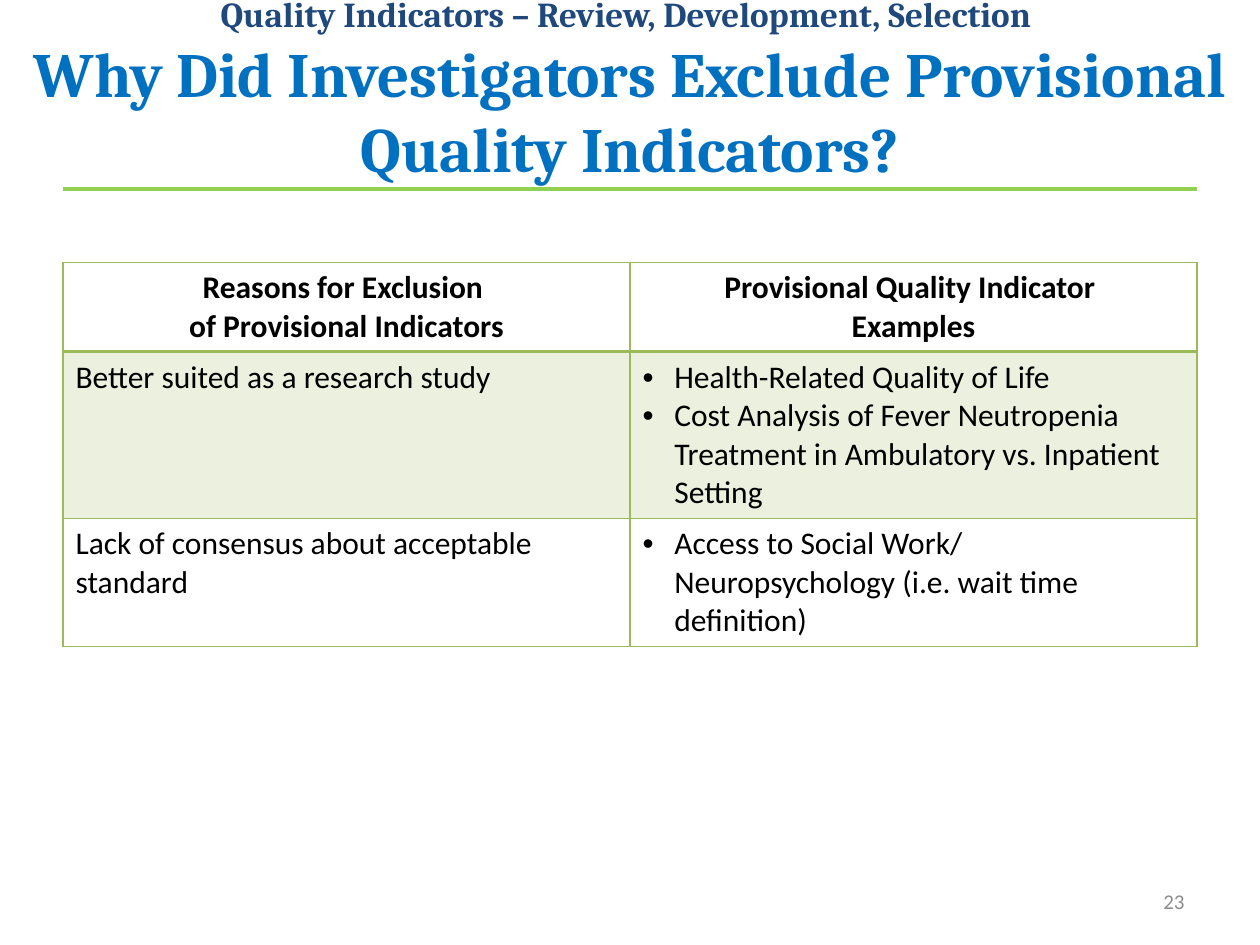
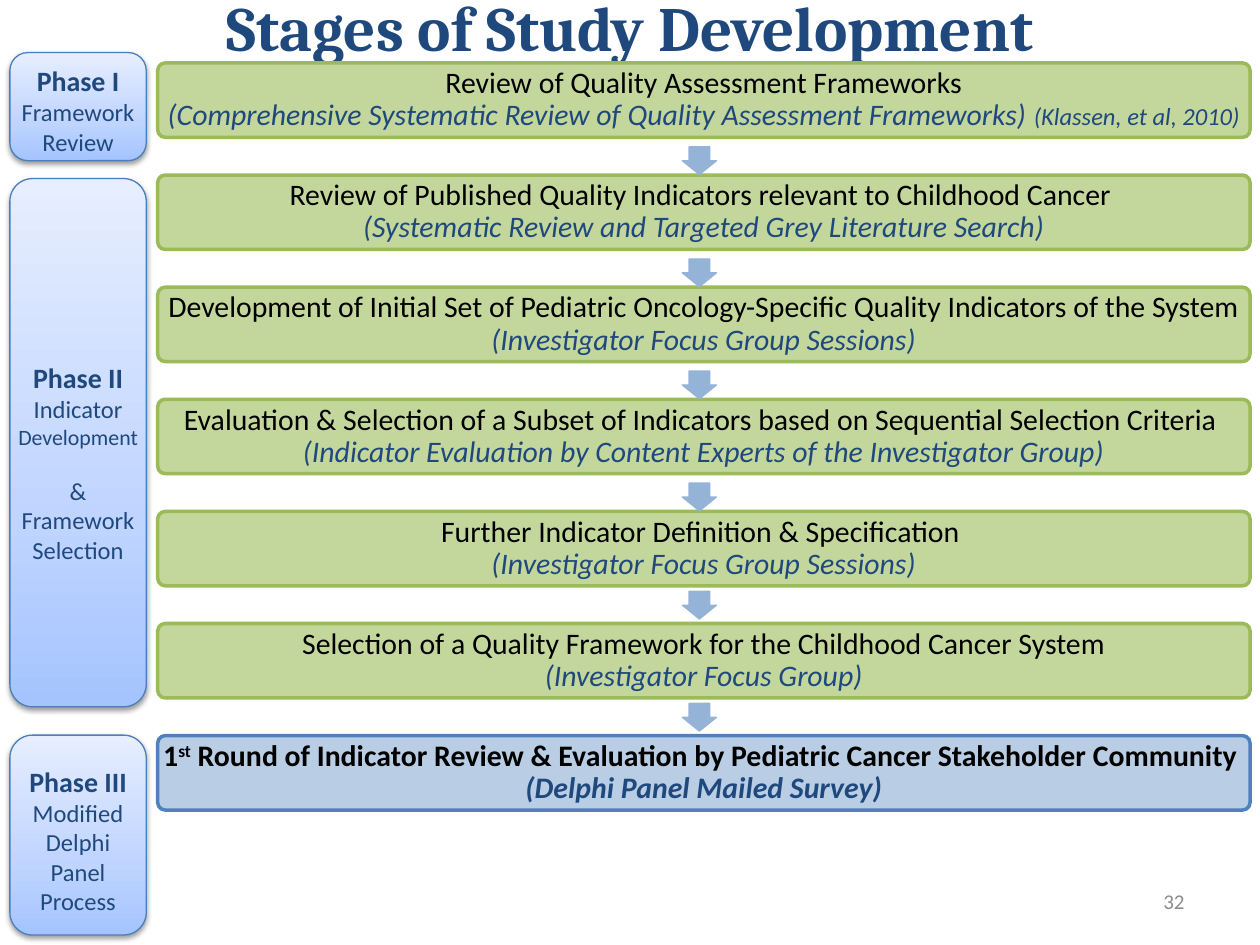
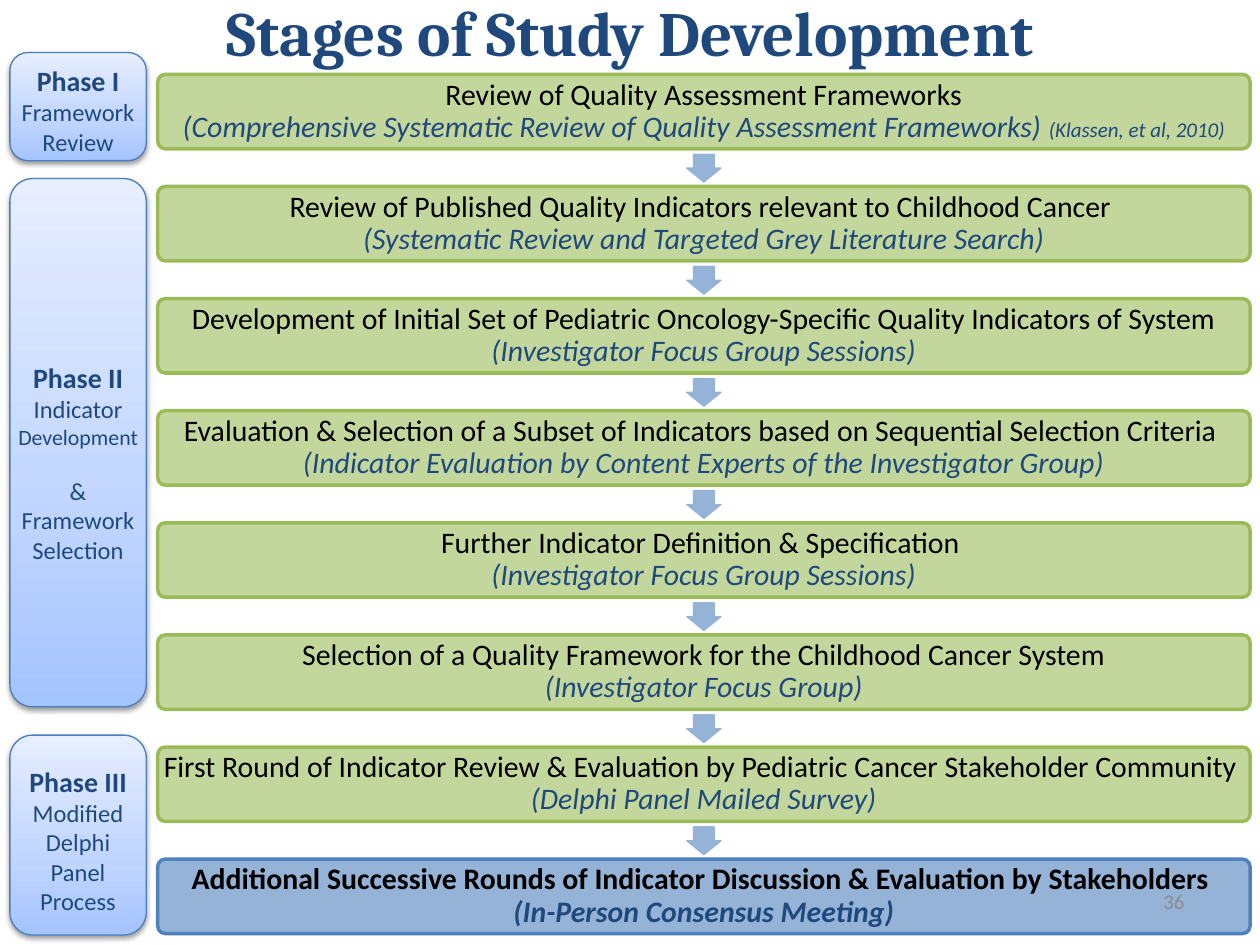
from copy import deepcopy
from dataclasses import dataclass

from lxml import etree
from pptx import Presentation
from pptx.dml.color import RGBColor
from pptx.enum import shapes, text
from pptx.oxml import ns
from pptx.util import Cm, Pt

NAVY, BLUE, BLACK, GREY = "1F497D", "0070C0", "000000", "8C8C8C"
LIME, LEAF, MOSS, PALE = "92D050", "9BBB59", "C3D69B", "EBF1DE"
STEEL, SKY, EDGE, RIM = "95B3D7", "B9CDE5", "4F81BD", "4B7EBC"
GLOW = ((0, "A4C4FF"), (0.35, "BFD4FF"), (1, "E6EEFF"))
HEAD, BODY = "Cambria", "Calibri"
CENTER = text.PP_ALIGN.CENTER
SHAPE = shapes.MSO_SHAPE

BAR_LEFT, BAR_WIDE, BAR_HIGH, STEP = 3.18, 22.02, 1.5, 2.26
ARROW_WIDE, ARROW_HIGH = 0.69, 0.56


@dataclass(frozen=True)
class Piece:
    """A stretch of text in one style; a closing \\v breaks the line."""
    words: str
    size: float
    color: str = BLACK
    bold: bool = False
    slant: bool = False
    font: str = BODY
    lift: int = 0


@dataclass(frozen=True)
class Stage:
    pieces: tuple[Piece, ...]
    fill: str = MOSS
    edge: str = LEAF


@dataclass(frozen=True)
class Phase:
    form: int
    top: float
    high: float
    inset: float
    paras: tuple[tuple[Piece, ...], ...]


@dataclass(frozen=True)
class Flow:
    number: str
    title: float
    top: float
    axis: float
    drops: tuple[float, ...]
    stages: tuple[Stage, ...]


def rgb(code: str) -> RGBColor:
    return RGBColor.from_string(code)


def add(parent, tag: str, **attrs):
    return etree.SubElement(parent, ns.qn(tag), **attrs)


def write(para, pieces, align=CENTER) -> None:
    para.alignment = align
    for piece in pieces:
        run = para.add_run()
        run.text = piece.words.rstrip("\v")
        font = run.font
        font.name, font.size = piece.font, Pt(piece.size)
        font.bold, font.italic = piece.bold, piece.slant
        font.color.rgb = rgb(piece.color)
        if piece.lift:
            run._r.get_or_add_rPr().set("baseline", str(piece.lift * 1000))
        if piece.words.endswith("\v"):
            para.add_line_break()
            add(para._p[-1], "a:rPr", sz=str(int(piece.size * 100)))


def place(item, left: float, top: float, wide: float, high: float) -> None:
    item.left, item.top = Cm(left), Cm(top)
    item.width, item.height = Cm(wide), Cm(high)


def shape(slide, form, left, top, wide, high, edge: str, weight: float):
    item = slide.shapes.add_shape(form, Cm(left), Cm(top), Cm(wide), Cm(high))
    item.shadow.inherit = False
    item.line.color.rgb = rgb(edge)
    item.line.width = Pt(weight)
    return item


def page(deck, top: float, high: float, pieces):
    """Add a slide with its title set."""
    slide = deck.slides.add_slide(deck.slide_layouts[5])
    title = slide.shapes.title
    place(title, 0, top, 25.4, high)
    frame = title.text_frame
    frame.auto_size = text.MSO_AUTO_SIZE.NONE
    frame.vertical_anchor = text.MSO_ANCHOR.MIDDLE
    write(frame.paragraphs[0], pieces)
    return slide


def footer(slide, number: str) -> None:
    box = slide.shapes.add_textbox(Cm(18.21), Cm(17.65), Cm(5.92), Cm(1.02))
    frame = box.text_frame
    frame.word_wrap = True
    frame.vertical_anchor = text.MSO_ANCHOR.MIDDLE
    write(frame.paragraphs[0], (Piece(number, 12, GREY),), text.PP_ALIGN.RIGHT)


def rule(slide) -> None:
    line = slide.shapes.add_connector(
        shapes.MSO_CONNECTOR.STRAIGHT, Cm(1.27), Cm(3.81), Cm(24.13), Cm(3.81))
    line.line.color.rgb = rgb(LIME)
    line.line.width = Pt(2.5)
    add(line._element.spPr, "a:effectLst")


def border(cell, sides: dict[str, float]) -> None:
    props = cell._tc.get_or_add_tcPr()
    for spot, (side, weight) in enumerate(sides.items()):
        line = etree.Element(ns.qn(f"a:ln{side}"), w=str(Pt(weight)))
        add(add(line, "a:solidFill"), "a:srgbClr", val=LEAF)
        props.insert(spot, line)


def bullet(para) -> None:
    props = para._p.get_or_add_pPr()
    props.set("marL", str(Cm(0.64)))
    props.set("indent", str(Cm(-0.64)))
    add(props, "a:buFont", typeface="Arial")
    add(props, "a:buChar", char="•")


def table(slide, rows, highs) -> None:
    frame = slide.shapes.add_table(
        len(rows), 2, Cm(1.27), Cm(5.29), Cm(22.86), Cm(sum(highs)))
    grid = frame.table
    grid.first_row = grid.horz_banding = False
    for r, (row, high) in enumerate(zip(rows, highs)):
        grid.rows[r].height = Cm(high)
        for c, words in enumerate(row):
            cell = grid.cell(r, c)
            if r == 1:
                cell.fill.solid()
                cell.fill.fore_color.rgb = rgb(PALE)
            else:
                cell.fill.background()
            border(cell, {"L": 1, "R": 1, "T": 2 if r == 1 else 1,
                          "B": 2 if r == 0 else 1})
            body = cell.text_frame
            for n, lines in enumerate(words):
                para = body.add_paragraph() if n else body.paragraphs[0]
                pieces = [Piece(line, 18, bold=r == 0)
                          for line in lines.splitlines(keepends=True)]
                write(para, pieces, CENTER if r == 0 else text.PP_ALIGN.LEFT)
                if r and c:
                    bullet(para)


def phase(slide, part: Phase) -> None:
    item = shape(slide, part.form, 0.2, part.top, 2.75, part.high, RIM, 0.75)
    item.fill.gradient()
    item.fill.gradient_angle = 90
    first = item.fill.gradient_stops[0]._gs
    first.addnext(deepcopy(first))
    for stop, (spot, code) in zip(item.fill.gradient_stops, GLOW):
        stop.position = spot
        stop.color.rgb = rgb(code)
    glow = add(item._element.spPr.find(ns.qn("a:effectLst")), "a:outerShdw",
               blurRad="40000", dist="20000", dir="5400000", rotWithShape="0")
    add(add(glow, "a:srgbClr", val=BLACK), "a:alpha", val="38000")
    frame = item.text_frame
    frame.word_wrap = True
    frame.vertical_anchor = text.MSO_ANCHOR.TOP
    frame.margin_left = frame.margin_right = frame.margin_bottom = 0
    frame.margin_top = Cm(part.inset)
    for n, pieces in enumerate(part.paras):
        para = frame.add_paragraph() if n else frame.paragraphs[0]
        if n:
            para.space_before = Pt(15)
        write(para, pieces)


def bar(slide, stage: Stage, top: float) -> None:
    item = shape(slide, SHAPE.ROUNDED_RECTANGLE, BAR_LEFT, top,
                 BAR_WIDE, BAR_HIGH, stage.edge, 2)
    item.adjustments[0] = 0.1
    item.fill.solid()
    item.fill.fore_color.rgb = rgb(stage.fill)
    frame = item.text_frame
    frame.word_wrap = True
    frame.vertical_anchor = text.MSO_ANCHOR.MIDDLE
    frame.margin_left = frame.margin_right = Cm(0.03)
    frame.margin_top = frame.margin_bottom = Cm(0.18)
    frame.paragraphs[0].line_spacing = 0.9
    write(frame.paragraphs[0], stage.pieces)


def arrow(slide, axis: float, top: float) -> None:
    item = shape(slide, SHAPE.DOWN_ARROW, axis - ARROW_WIDE / 2, top,
                 ARROW_WIDE, ARROW_HIGH, STEEL, 0.75)
    item.adjustments[0], item.adjustments[1] = 0.6, 0.5
    item.fill.solid()
    item.fill.fore_color.rgb = rgb(STEEL)


def step(head: str, how: str, *more: Piece) -> Stage:
    return Stage((Piece(head + "\v", 17), Piece(how, 17, NAVY, slant=True), *more))


def early(cite: float, scope: str) -> tuple[Stage, ...]:
    """The six stages before the panel rounds."""
    focus = "(Investigator Focus Group Sessions)"
    return (
        step("Review of Quality Assessment Frameworks",
             "(Comprehensive Systematic Review of Quality Assessment Frameworks) ",
             Piece("(Klassen, et al, 2010)", cite, NAVY, slant=True)),
        step("Review of Published Quality Indicators relevant to Childhood Cancer ",
             "(Systematic Review and Targeted Grey Literature Search)"),
        step("Development of Initial Set of Pediatric Oncology-Specific "
             f"Quality Indicators of {scope}", focus),
        step("Evaluation & Selection of a Subset of Indicators based on "
             "Sequential Selection Criteria ",
             "(Indicator Evaluation by Content Experts of the Investigator Group)"),
        step("Further Indicator Definition & Specification ", focus),
        step("Selection of a Quality Framework for the Childhood Cancer System",
             "(Investigator Focus Group)"),
    )


def label(name: str, *rest: Piece) -> tuple[Piece, ...]:
    return (Piece(name + " ", 16, NAVY, True), *rest)


ROUND = "Round of Indicator Review & Evaluation by Pediatric Cancer Stakeholder Community "
SURVEY = "(Delphi Panel Mailed Survey)"

PHASES = (
    Phase(SHAPE.FLOWCHART_ALTERNATE_PROCESS, 1.06, 2.18, 0.12,
          (label("Phase I", Piece("Framework Review", 14, NAVY)),)),
    Phase(SHAPE.ROUNDED_RECTANGLE, 3.6, 10.65, 3.53,
          (label("Phase II", Piece("Indicator ", 14, NAVY),
                 Piece("Development", 12.5, NAVY)),
           (Piece("& Framework Selection", 14, NAVY),))),
    Phase(SHAPE.ROUNDED_RECTANGLE, 14.82, 4.03, 0.45,
          (label("Phase III", Piece("Modified Delphi Panel Process", 14, NAVY)),)),
)

FLOWS = (
    Flow("32", 1.06, 1.27, 14.1, (1.69,) * 4 + (1.61,) * 2,
         early(14, "the System") + (
             Stage((Piece("1", 17, bold=True),
                    Piece("st", 17, bold=True, lift=30),
                    Piece(f" {ROUND}\v", 17, bold=True),
                    Piece(SURVEY, 17, NAVY, True, True)), SKY, EDGE),)),
    Flow("36", 1.27, 1.5, 14.19, (1.61,) * 7,
         early(12, "System") + (
             step(f"First {ROUND}", SURVEY),
             Stage((Piece("Additional Successive Rounds of Indicator Discussion "
                          "& Evaluation by Stakeholders \v", 17, bold=True),
                    Piece("(In-Person Consensus Meeting)", 17, NAVY, True, True)),
                   STEEL, EDGE))),
)

ROWS = (
    (("Reasons for Exclusion \vof Provisional Indicators",),
     ("Provisional Quality Indicator \vExamples",)),
    (("Better suited as a research study",),
     ("Health-Related Quality of Life",
      "Cost Analysis of Fever Neutropenia Treatment in Ambulatory vs. "
      "Inpatient Setting")),
    (("Lack of consensus about acceptable standard",),
     ("Access to Social Work/ Neuropsychology (i.e. wait time definition)",)),
)


def reasons(deck) -> None:
    slide = page(deck, 0.2, 3.18, (
        Piece("Quality Indicators – Review, Development, Selection \v",
              20, NAVY, True, font=HEAD),
        Piece("Why Did Investigators Exclude Provisional Quality Indicators?",
              36, BLUE, True, font=HEAD)))
    rule(slide)
    table(slide, ROWS, (1.8, 3.35, 2.57))
    footer(slide, "23")


def stages(deck, flow: Flow) -> None:
    slide = page(deck, 0, flow.title, (
        Piece("Stages of Study Development", 36, NAVY, True, font=HEAD),))
    for part in PHASES:
        phase(slide, part)
    for n, stage in enumerate(flow.stages):
        bar(slide, stage, flow.top + n * STEP)
    for n, drop in enumerate(flow.drops):
        arrow(slide, flow.axis, flow.top + n * STEP + drop)
    footer(slide, flow.number)


def main() -> None:
    deck = Presentation()
    deck.slide_width, deck.slide_height = Cm(25.4), Cm(19.05)
    reasons(deck)
    for flow in FLOWS:
        stages(deck, flow)
    deck.save("out.pptx")


if __name__ == "__main__":
    main()
